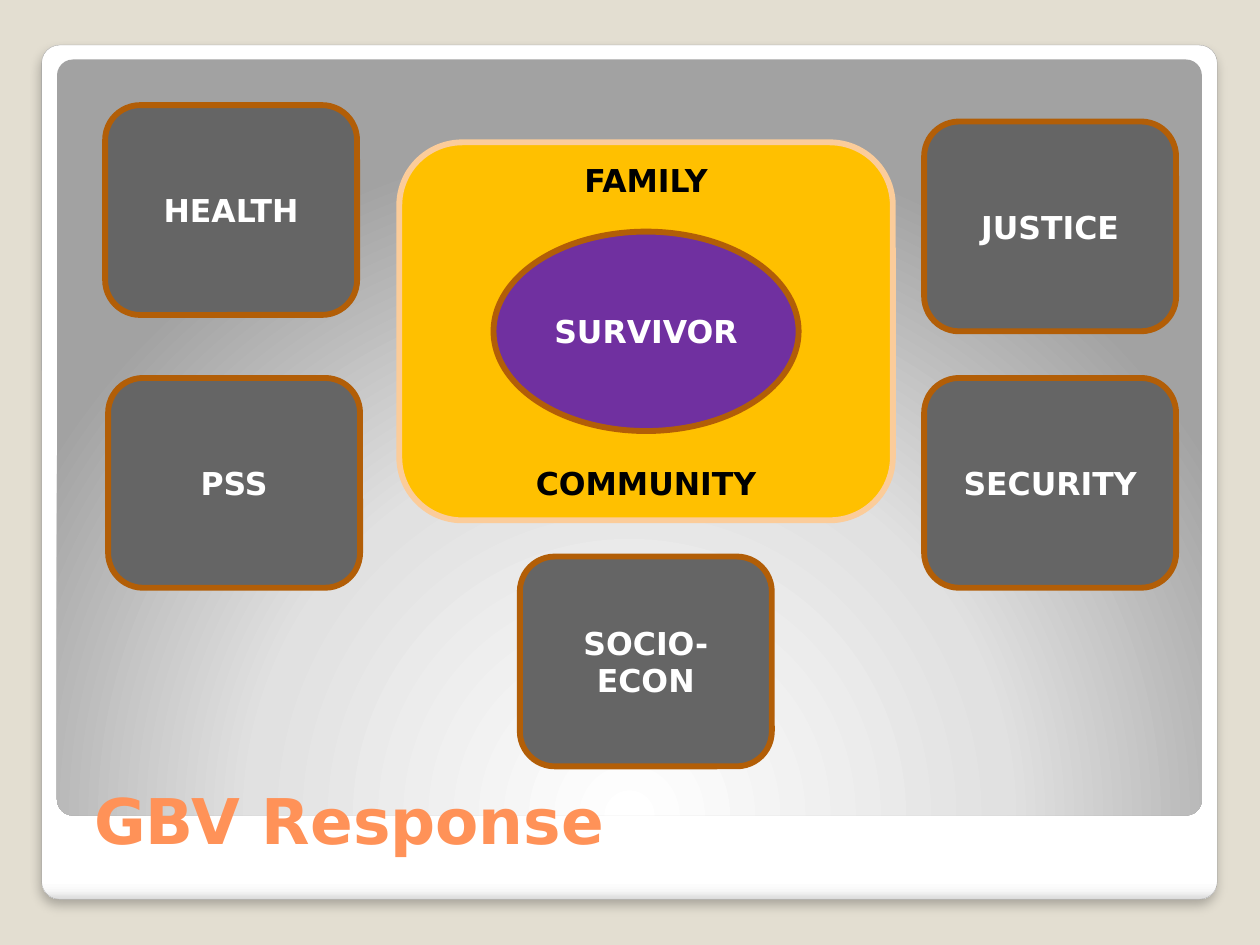
from lxml import etree
from pptx import Presentation
from pptx.dml.color import RGBColor
from pptx.enum.shapes import MSO_SHAPE
from pptx.enum.text import MSO_ANCHOR, PP_ALIGN
from pptx.oxml import parse_xml
from pptx.util import Cm, Pt

ROUND, OVAL = MSO_SHAPE.ROUNDED_RECTANGLE, MSO_SHAPE.OVAL
CENTER, LEFT = PP_ALIGN.CENTER, PP_ALIGN.LEFT
MIDDLE, BOTTOM = MSO_ANCHOR.MIDDLE, MSO_ANCHOR.BOTTOM
NS = "http://schemas.openxmlformats.org/drawingml/2006/main"
FONT = "DejaVu Sans"

SAND = RGBColor(0xE3, 0xDE, 0xD1)
WHITE = RGBColor(0xFF, 0xFF, 0xFF)
BLACK = RGBColor(0x00, 0x00, 0x00)
OFF_WHITE = RGBColor(0xF7, 0xF7, 0xF7)
PALE = RGBColor(0xDA, 0xDA, 0xDA)
LIGHT = RGBColor(0xE1, 0xE1, 0xE1)
SILVER = RGBColor(0xA2, 0xA2, 0xA2)
EDGE = RGBColor(0xA4, 0xA4, 0xA4)
GREY = RGBColor(0x65, 0x65, 0x65)
AMBER = RGBColor(0xFF, 0xC0, 0x00)
PEACH = RGBColor(0xFB, 0xCC, 0x9A)
PURPLE = RGBColor(0x70, 0x30, 0xA0)
BROWN = RGBColor(0xB2, 0x5E, 0x07)
ORANGE = RGBColor(0xFF, 0x92, 0x58)


def add_text(tf, text, size=18, color=WHITE, align=CENTER, anchor=MIDDLE, gap=0):
    """Write one paragraph per line, parted by a gap in points."""
    tf.word_wrap = True
    tf.vertical_anchor = anchor
    for i, line in enumerate(text.split("\n")):
        p = tf.paragraphs[0] if i == 0 else tf.add_paragraph()
        p.alignment = align
        p.space_before = Pt(gap if i else 0)
        r = p.add_run()
        r.text = line
        r.font.name, r.font.size, r.font.bold = FONT, Pt(size), True
        r.font.color.rgb = color


def add_box(s, kind, x, y, w, h, fill=None, line=None, weight=3.35):
    """Add a preset shape without shadow, sized in centimetres."""
    sp = s.shapes.add_shape(kind, Cm(x), Cm(y), Cm(w), Cm(h))
    sp.shadow.inherit = False
    if fill is not None:
        sp.fill.solid()
        sp.fill.fore_color.rgb = fill
    if line is None:
        sp.line.fill.background()
    else:
        sp.line.color.rgb = line
        sp.line.width = Pt(weight)
    return sp


def set_gradient(sp, stops, direction):
    """Fill a shape with gradient stops along the given direction element."""
    gs = "".join(f'<a:gs pos="{pos * 1000}"><a:srgbClr val="{color}"/></a:gs>'
                 for pos, color in stops)
    grad = parse_xml(f'<a:gradFill xmlns:a="{NS}" rotWithShape="1">'
                     f'<a:gsLst>{gs}</a:gsLst>{direction}</a:gradFill>')
    sp._element.spPr.find(f"{{{NS}}}prstGeom").addnext(grad)


def add_shadow(sp):
    """Give a shape a soft shadow falling straight down."""
    effects = sp._element.spPr.find(f"{{{NS}}}effectLst")
    shadow = etree.SubElement(effects, f"{{{NS}}}outerShdw", blurRad=str(Pt(6)),
                              dist=str(Pt(4)), dir="5400000", algn="t", rotWithShape="0")
    color = etree.SubElement(shadow, f"{{{NS}}}srgbClr", val=str(BLACK))
    etree.SubElement(color, f"{{{NS}}}alpha", val="25000")


def add_frame(s, x, y, w, h):
    """Draw the white card and the shaded panel inside it."""
    inset = 0.31
    card = add_box(s, ROUND, x, y, w, h, line=EDGE, weight=0.16)
    set_gradient(card, [(0, WHITE), (98, WHITE), (99, OFF_WHITE), (100, PALE)],
                 '<a:lin ang="5400000" scaled="0"/>')
    add_shadow(card)
    panel = add_box(s, ROUND, x + inset, y + inset - 0.02, w - 2 * inset, 15.24)
    set_gradient(panel, [(0, WHITE), (55, LIGHT), (100, SILVER)],
                 '<a:path path="circle"><a:fillToRect l="50000" t="175000" '
                 'r="50000" b="-75000"/></a:path>')
    for sp in (card, panel):
        sp.adjustments[0] = 0.021


def add_hub(s, x, y, w, h):
    """Draw the survivor at the heart of family and community."""
    sp = add_box(s, ROUND, x, y, w, h, AMBER, PEACH)
    add_text(sp.text_frame, "FAMILY\nCOMMUNITY", color=BLACK, gap=152)
    ow, oh = 6.15, 4.02
    sp = add_box(s, OVAL, x + (w - ow) / 2, y + (h - oh) / 2, ow, oh, PURPLE, BROWN)
    add_text(sp.text_frame, "SURVIVOR")


def add_service(s, x, y, w, h, name):
    """Draw one response service."""
    sp = add_box(s, ROUND, x, y, w, h, GREY, BROWN)
    add_text(sp.text_frame, name)


def add_title(s, x, y, w, h, text):
    """Place the slide title at the foot of its box."""
    tf = s.shapes.add_textbox(Cm(x), Cm(y), Cm(w), Cm(h)).text_frame
    tf.margin_bottom = Cm(0.05)
    add_text(tf, text, size=36, color=ORANGE, align=LEFT, anchor=BOTTOM)


def main():
    prs = Presentation()
    prs.slide_width, prs.slide_height = Cm(25.4), Cm(19.05)
    s = prs.slides.add_slide(prs.slide_layouts[6])
    s.background.fill.solid()
    s.background.fill.fore_color.rgb = SAND

    add_frame(s, 0.84, 0.91, 23.7, 17.22)
    add_hub(s, 8.05, 2.87, 9.95, 7.62)
    add_title(s, 1.65, 14.4, 22.73, 2.92, "GBV Response")
    services = [("HEALTH", 2.12, 2.12), ("PSS", 2.18, 7.62), ("JUSTICE", 18.63, 2.45),
                ("SECURITY", 18.63, 7.62), ("SOCIO-ECON", 10.48, 11.22)]
    for name, x, y in services:
        add_service(s, x, y, 5.08, 4.23, name)

    prs.save("out.pptx")


if __name__ == "__main__":
    main()
